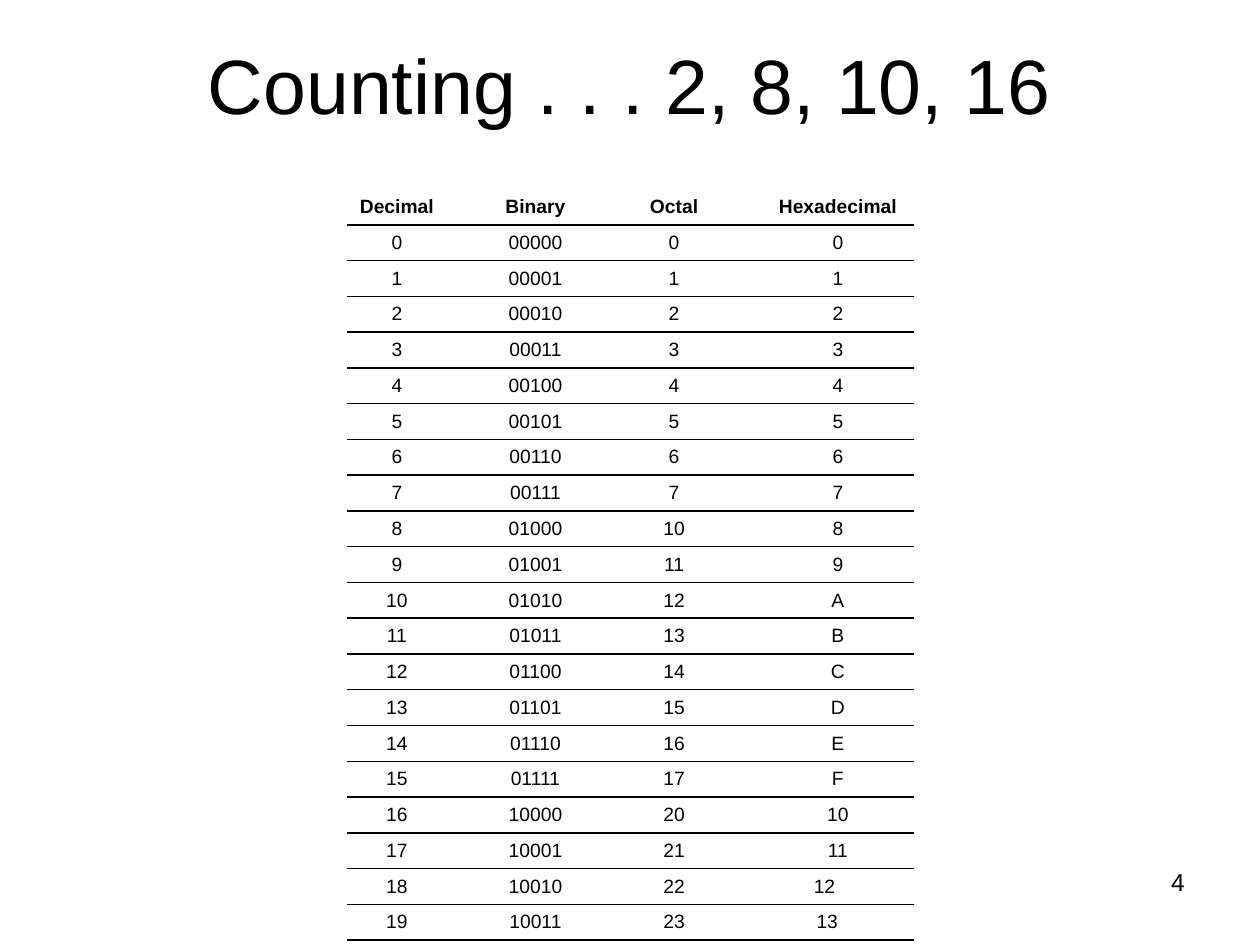
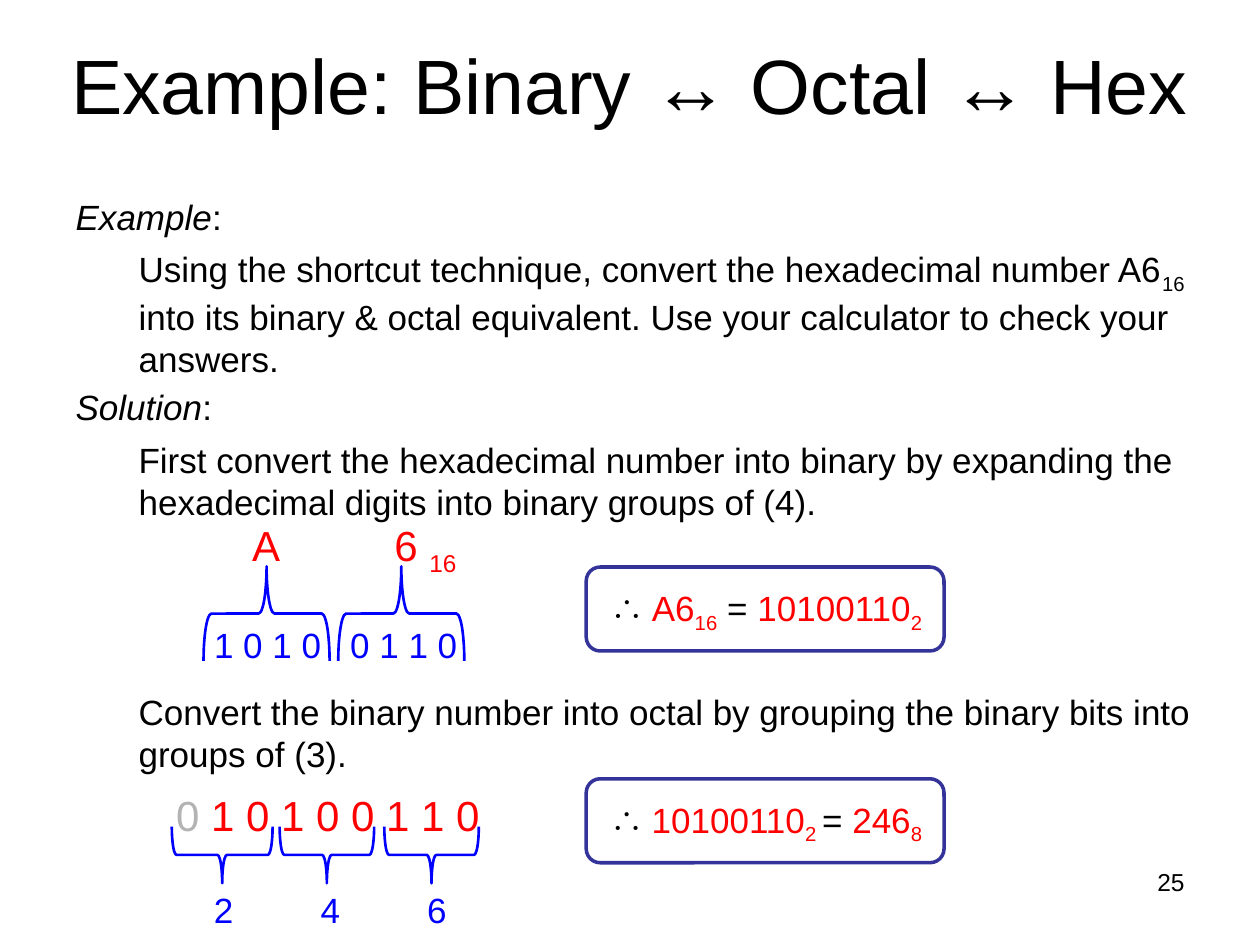
from lxml import etree
from pptx import Presentation
from pptx.dml.color import RGBColor
from pptx.enum import shapes, text
from pptx.oxml import ns
from pptx.util import Pt

FONT = "Arial"
BLACK, WHITE, GREY = "000000", "FFFFFF", "B3B3B3"
RED, BLUE, NAVY = "FF0000", "0000FF", "333399"
NO_STYLE = "{2D5ABB26-0587-4C30-8999-92F81FD0307C}"
LEFT, CENTER, RIGHT = text.PP_ALIGN.LEFT, text.PP_ALIGN.CENTER, text.PP_ALIGN.RIGHT
MIDDLE = text.MSO_ANCHOR.MIDDLE


def rgb(value):
    return RGBColor.from_string(value)


def child(parent, tag, **attrs):
    return etree.SubElement(parent, ns.qn(tag), attrs)


def place(sp, left, top, width, height):
    box = {"left": left, "top": top, "width": width, "height": height}
    for name, value in box.items():
        setattr(sp, name, Pt(value))


def add_run(p, words, size, color=BLACK, sub=False, **formats):
    r = p.add_run()
    r.text = words
    for name, value in {"name": FONT, "size": Pt(size), **formats}.items():
        setattr(r.font, name, value)
    r.font.color.rgb = rgb(color)
    if sub:
        r.font._element.set("baseline", "-25000")


def fill_paragraph(p, runs, size, align=LEFT):
    p.alignment = align
    for words, *style in runs:
        color = style[0] if style else BLACK
        add_run(p, words, size, color, sub="sub" in style)


def add_label(s, runs, left, top, width, height, size, align=LEFT, bullet=None):
    tf = s.shapes.add_textbox(Pt(left), Pt(top), Pt(width), Pt(height)).text_frame
    tf.word_wrap = True
    p = tf.paragraphs[0]
    if bullet:
        child(p._p.get_or_add_pPr(), "a:buChar", char=bullet)
    fill_paragraph(p, runs, size, align)


def add_slide(prs, layout, title, number):
    s = prs.slides.add_slide(prs.slide_layouts[layout])
    place(s.shapes.title, 0, 0, 720, 96)
    tf = s.shapes.title.text_frame
    tf.vertical_anchor = MIDDLE
    tf.auto_size = text.MSO_AUTO_SIZE.NONE
    fill_paragraph(tf.paragraphs[0], [(title,)], 44, CENTER)
    add_label(s, [(number,)], 516, 492, 168, 37, 14, RIGHT)
    return s


def fill_body(sp, heading, paragraphs, box):
    place(sp, *box)
    tf = sp.text_frame
    tf.auto_size = text.MSO_AUTO_SIZE.NONE
    p = tf.paragraphs[0]
    add_run(p, heading, 20, italic=True)
    add_run(p, ":", 20)
    for runs, gap in paragraphs:
        p = tf.add_paragraph()
        p.level = 1
        fill_paragraph(p, runs, 20)
        p.space_before = Pt(gap)
    tf.paragraphs[0].space_before = Pt(0)
    for p in tf.paragraphs:
        p.space_after = Pt(6)
        pPr = p._p.get_or_add_pPr()
        pPr.set("marL", str(Pt(36 * p.level)))
        pPr.set("indent", "0")
        child(pPr, "a:buNone")


def add_brace(s, left, top, width, height, rotation):
    sp = s.shapes.add_shape(shapes.MSO_SHAPE.LEFT_BRACE,
                            Pt(left), Pt(top), Pt(width), Pt(height))
    sp.rotation = rotation
    style_outline(sp, BLUE, 1.5)


def style_outline(sp, color, width):
    sp.shadow.inherit = False
    sp.fill.background()
    sp.line.color.rgb = rgb(color)
    sp.line.width = Pt(width)


def add_result(s, runs, top):
    add_label(s, runs, 334, top + 7.5, 200, 32, 20, RIGHT, bullet="∴")
    sp = s.shapes.add_shape(shapes.MSO_SHAPE.ROUNDED_RECTANGLE,
                            Pt(335), Pt(top), Pt(204.5), Pt(48))
    style_outline(sp, NAVY, 2)


def format_cell(cell, words, bold, extra_right):
    cell.vertical_anchor = MIDDLE
    cell.margin_right = Pt(7.2 + extra_right)
    cell.fill.solid()
    cell.fill.fore_color.rgb = rgb(WHITE)
    p = cell.text_frame.paragraphs[0]
    p.alignment = CENTER
    if words:
        add_run(p, words, 11, bold=bold)
    else:
        child(p._p, "a:endParaRPr", sz="1100")
    tcPr = cell._tc.get_or_add_tcPr()
    line = child(tcPr, "a:lnB", w=str(Pt(1)))
    child(child(line, "a:solidFill"), "a:srgbClr", val=BLACK)
    tcPr.insert(0, line)


def add_counting_table(s):
    widths = [57.6, 21.6, 57.6, 21.6, 57.6, 21.6, 86.4]
    header = ["Decimal", "", "Binary", "", "Octal", "", "Hexadecimal"]
    counts = [[str(n), "", f"{n:05b}", "", f"{n:o}", "", f"{n:X}"] for n in range(20)]
    rows = [header] + counts
    extra_right = {(19, 6): 15.3, (20, 6): 12.2}
    frame = s.shapes.add_table(len(rows), len(widths), Pt(198), Pt(108),
                               Pt(sum(widths)), Pt(20.43 * len(rows)))
    table = frame.table
    table.first_row = table.horz_banding = False
    table._tbl.tblPr.find(ns.qn("a:tableStyleId")).text = NO_STYLE
    for column, width in zip(table.columns, widths):
        column.width = Pt(width)
    for i, row in enumerate(rows):
        table.rows[i].height = Pt(20.43)
        for j, words in enumerate(row):
            format_cell(table.cell(i, j), words, i == 0, extra_right.get((i, j), 0))


def add_hex_expansion(s):
    add_label(s, [("A", RED)], 137, 293.5, 40, 36, 24)
    add_label(s, [("6 ", RED), ("16", RED, "sub")], 218.3, 293.5, 70, 36, 24)
    for i, bits in enumerate(["1 0 1 0", "0 1 1 0"]):
        add_brace(s, 125.3 + 77 * i, 314.6, 54, 72, 90)
        add_label(s, [(bits, BLUE)], 115.2 + 77.8 * i, 352.8, 85, 32, 20)


def add_octal_grouping(s):
    add_label(s, [("0", GREY), (" 1 0 1 0 0 1 1 0", RED)], 93.6, 447.8, 203, 37, 24)
    for i, (digit, span) in enumerate([("2", 57.6), ("4", 54), ("6", 54)]):
        add_brace(s, 110.8 + 59.8 * i, 488.5 - span / 2, 32.4, span, 270)
        add_label(s, [(digit, BLUE)], 115.2 + 60.9 * i, 504, 30, 32, 20)


def main():
    prs = Presentation()
    prs.slide_width, prs.slide_height = Pt(720), Pt(540)

    s = add_slide(prs, 5, "Counting . . . 2, 8, 10, 16", "4")
    add_counting_table(s)

    s = add_slide(prs, 3, "Example: Binary ↔ Octal ↔ Hex", "25")
    question = [
        ("Using the shortcut technique, convert the hexadecimal number A6",),
        ("16", BLACK, "sub"),
        (" into its binary & octal equivalent. Use your calculator to check your answers.",),
    ]
    to_binary = [("First convert the hexadecimal number into binary by expanding "
                  "the hexadecimal digits into binary groups of (4).",)]
    to_octal = [("Convert the binary number into octal by grouping the binary "
                 "bits into groups of (3).",)]
    fill_body(s.placeholders[1], "Example", [(question, 0)], (36, 108, 684, 110))
    fill_body(s.placeholders[2], "Solution", [(to_binary, 0), (to_octal, 90)],
              (36, 216.7, 666, 229))
    add_hex_expansion(s)
    add_octal_grouping(s)
    add_result(s, [(" ",), ("A6", RED), ("16", RED, "sub"), (" = ",),
                   ("10100110", RED), ("2", RED, "sub")], 324)
    add_result(s, [(" ",), ("10100110", RED), ("2 ", RED, "sub"), ("= ",),
                   ("246", RED), ("8", RED, "sub")], 445)
    prs.save("out.pptx")


if __name__ == "__main__":
    main()
